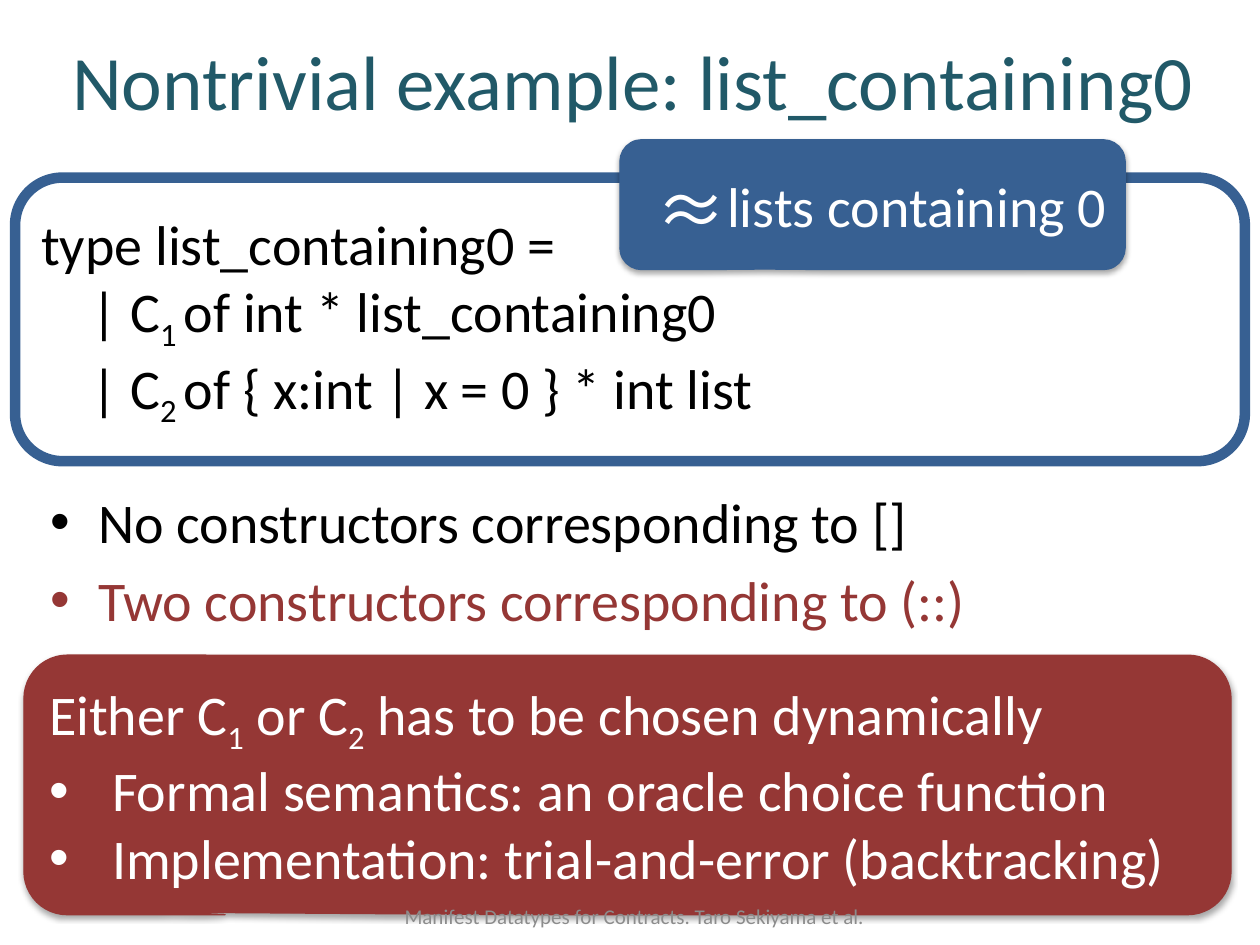
from lxml import etree
from pptx import Presentation
from pptx.dml.color import RGBColor
from pptx.enum.shapes import MSO_SHAPE
from pptx.enum.text import MSO_ANCHOR, PP_ALIGN
from pptx.oxml import parse_xml
from pptx.oxml.ns import nsdecls, qn
from pptx.util import Inches, Pt

COLORS = {
    "title": "215968",
    "text": "000000",
    "blue": "376092",
    "red": "953735",
    "white": "FFFFFF",
    "footer": "8C8C8C",
}


def write(box, lines, size, color, align=PP_ALIGN.LEFT, anchor=MSO_ANCHOR.MIDDLE, font="Calibri"):
    """Each line is (pieces, left margin, first-line indent, bulleted); every second piece is a subscript."""
    frame = box.text_frame
    frame.word_wrap = True
    frame.vertical_anchor = anchor
    for index, (pieces, margin, indent, bulleted) in enumerate(lines):
        para = frame.paragraphs[0] if index == 0 else frame.add_paragraph()
        para.alignment = align
        properties = para._p.get_or_add_pPr()
        properties.set("marL", str(Inches(margin)))
        properties.set("indent", str(Inches(indent)))
        if bulleted:
            etree.SubElement(properties, qn("a:buFont")).set("typeface", "Arial")
            etree.SubElement(properties, qn("a:buChar")).set("char", "•")
        for position, piece in enumerate(pieces):
            span = para.add_run()
            span.text = piece
            span.font.name = font
            span.font.size = Pt(size)
            span.font.color.rgb = RGBColor.from_string(COLORS[color])
            if position % 2:
                span.font._element.set("baseline", "-25000")


def add_callout(left, top, width, height, color, adjustments):
    box = page.shapes.add_shape(MSO_SHAPE.ROUNDED_RECTANGULAR_CALLOUT,
                                Inches(left), Inches(top), Inches(width), Inches(height))
    for index, value in enumerate(adjustments):
        box.adjustments[index] = value
    box.fill.solid()
    box.fill.fore_color.rgb = RGBColor.from_string(COLORS[color])
    box.line.color.rgb = RGBColor.from_string(COLORS[color])
    box.line.width = Pt(0.75)
    box._element.spPr.append(parse_xml(
        f'<a:effectLst {nsdecls("a")}><a:outerShdw blurRad="{Pt(3.1)}" dist="{Pt(1.8)}" '
        'dir="5400000" rotWithShape="0"><a:srgbClr val="000000"><a:alpha val="35000"/>'
        '</a:srgbClr></a:outerShdw></a:effectLst>'))
    return box


deck = Presentation()
deck.slide_width = Inches(10)
deck.slide_height = Inches(7.5)
page = deck.slides.add_slide(deck.slide_layouts[6])

# Title
title = page.shapes.add_textbox(Inches(0.24), Inches(0.01), Inches(9.57), Inches(1.25))
write(title, [(["Nontrivial example: list_containing0"], 0, 0, False)], 44, "title", PP_ALIGN.CENTER)

# Remarks on the constructors
remarks = page.shapes.add_textbox(Inches(0.3), Inches(3.82), Inches(9.51), Inches(1.32))
write(remarks, [
    (["No constructors corresponding to []"], 0.38, -0.38, True),
    (["Two constructors corresponding to (::)"], 0.38, -0.38, True),
], 32, "text", anchor=MSO_ANCHOR.TOP)
for para in remarks.text_frame.paragraphs:
    para.space_before = Pt(6)
remarks.text_frame.paragraphs[1].runs[0].font.color.rgb = RGBColor.from_string(COLORS["red"])

# Type definition
definition = page.shapes.add_shape(MSO_SHAPE.ROUNDED_RECTANGLE,
                                   Inches(0.12), Inches(1.41), Inches(9.76), Inches(2.25))
definition.shadow.inherit = False
definition.fill.background()
definition.line.color.rgb = RGBColor.from_string(COLORS["blue"])
definition.line.width = Pt(6)
write(definition, [
    (["type list_containing0 ="], 0, 0, False),
    (["| C", "1 ", "of int * list_containing0"], 0.4, 0, False),
    (["| C", "2 ", "of { x:int | x = 0 } * int list"], 0.4, 0, False),
], 32, "text")

# Meaning of the type
meaning = add_callout(4.92, 1.11, 4.01, 1.03, "blue", [-0.214, 0.496, 0.167])
write(meaning, [(["lists containing 0"], 0.5, 0, False)], 32, "white", PP_ALIGN.RIGHT)
symbol = page.shapes.add_textbox(Inches(5.11), Inches(1.27), Inches(0.58), Inches(0.77))
write(symbol, [(["≈"], 0, 0, False)], 40, "white", anchor=MSO_ANCHOR.TOP, font="Noto Sans CJK JP")
symbol_font = symbol.text_frame.paragraphs[0].runs[0].font._element
etree.SubElement(symbol_font, qn("a:ea")).set("typeface", "Noto Sans CJK JP")

# Choice of constructor
choice = add_callout(0.19, 5.2, 9.58, 2.06, "red", [-0.388, 0.49, 0.167])
write(choice, [
    (["Either C", "1", " or C", "2", " has to be chosen dynamically"], 0, 0, False),
    (["Formal semantics: an oracle choice function"], 0.5, -0.5, True),
    (["Implementation: trial-and-error (backtracking)"], 0.5, -0.5, True),
], 32, "white")

# Footer
footer = page.shapes.add_textbox(Inches(2.79), Inches(7.07), Inches(4.49), Inches(0.4))
write(footer, [(["Manifest Datatypes for Contracts. Taro Sekiyama et al."], 0, 0, False)],
      12, "footer", PP_ALIGN.CENTER)

deck.save("out.pptx")
